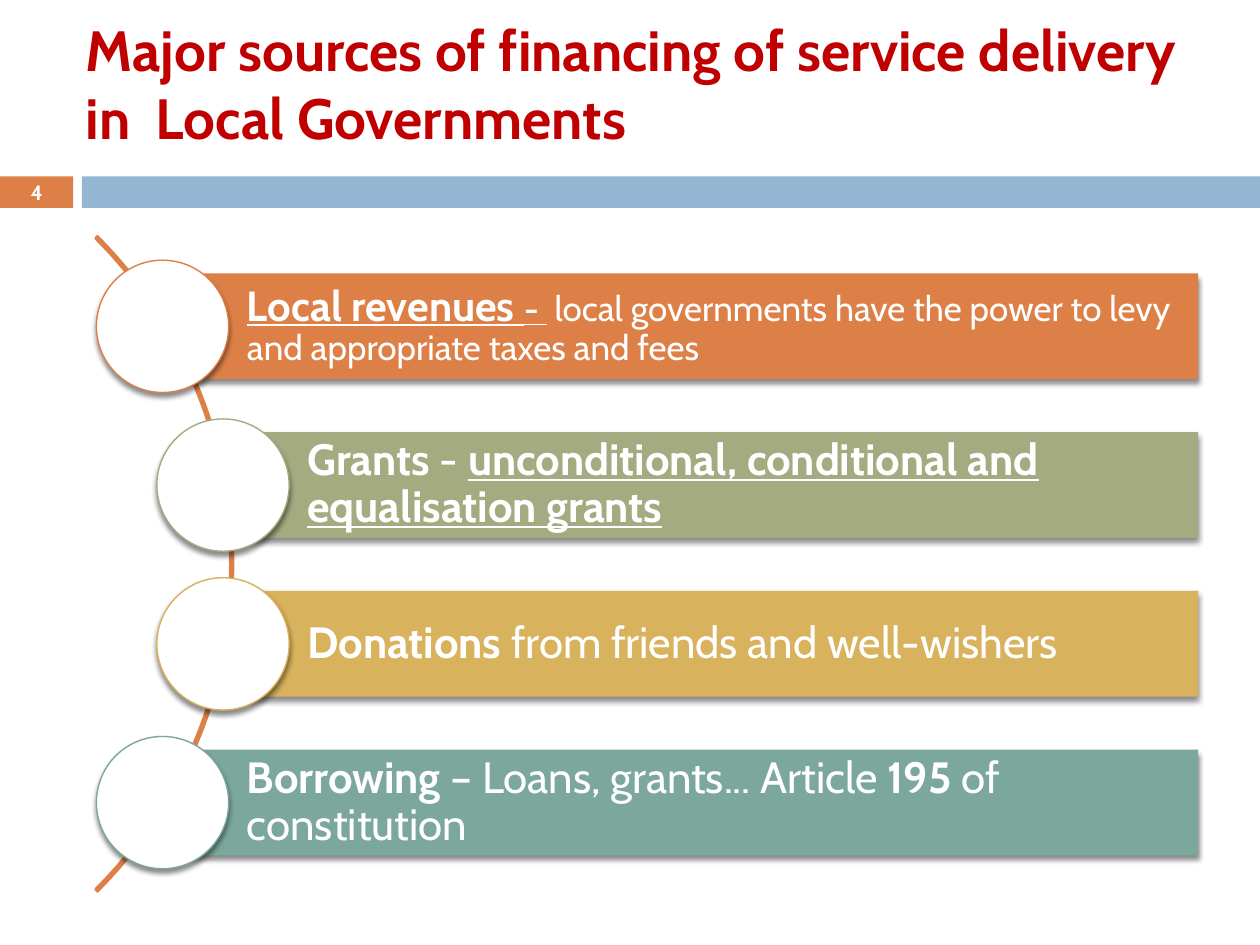
import pptx
import pptx.dml.color
import pptx.enum.shapes
import pptx.enum.text
import pptx.util
from lxml import etree
from pptx.oxml.ns import qn

SHAPE = pptx.enum.shapes.MSO_SHAPE
ALIGN = pptx.enum.text.PP_ALIGN
ANCHOR = pptx.enum.text.MSO_ANCHOR

WIDTH, HEIGHT = 10, 7.5
FONT = "Cabin"
WHITE, RED, ORANGE, BLUE = "FFFFFF", "C00000", "DD8047", "94B6D2"

# Rows of the list: circles stand on a fixed vertical pitch
FIRST_CENTER, PITCH = 2.59, 1.26
OUTER, INNER = 1.29, 1.77
BAR_RIGHT, BAR_HEIGHT, CIRCLE = 9.51, 0.84, 1.05

BOLD = {"bold": True}
PLAIN = {"bold": False}
KEY = {"bold": True, "underline": True}

# Each row: left edge, colour, text size, spans of text with their format
ROWS = [
    (OUTER, ORANGE, 20, [
        ("Local revenues ", {**KEY, "size": 24}),
        ("- ", KEY),
        (" local governments have the power to levy and appropriate taxes and fees", PLAIN)]),
    (INNER, "A5AB81", 25, [
        ("Grants ", BOLD),
        ("- ", PLAIN),
        ("unconditional, conditional and equalisation grants", KEY)]),
    (INNER, "D8B25C", 25, [
        ("Donations", BOLD),
        (" from friends and well-wishers", PLAIN)]),
    (OUTER, "7BA79D", 25, [
        ("Borrowing", BOLD),
        (" – Loans, grants... Article ", PLAIN),
        ("195", BOLD),
        (" of constitution", PLAIN)]),
]


def color(value):
    return pptx.dml.color.RGBColor.from_string(value)


def inches(*lengths):
    return [pptx.util.Inches(length) for length in lengths]


def add_shape(page, kind, place, fill=None, line=None, weight=1, shadow=False):
    shape = page.shapes.add_shape(kind, *inches(*place))
    shape.shadow.inherit = False
    if fill:
        shape.fill.solid()
        shape.fill.fore_color.rgb = color(fill)
    else:
        shape.fill.background()
    if line:
        shape.line.color.rgb = color(line)
        shape.line.width = pptx.util.Pt(weight)
    else:
        shape.line.fill.background()
    if shadow:
        add_shadow(shape)
    return shape


def add_shadow(shape, blur=3, distance=2.4, opacity=45):
    effects = shape._element.spPr.find(qn("a:effectLst"))
    outer = etree.SubElement(
        effects, qn("a:outerShdw"), blurRad=str(pptx.util.Pt(blur)),
        dist=str(pptx.util.Pt(distance)), dir="5400000", algn="ctr", rotWithShape="0")
    black = etree.SubElement(outer, qn("a:srgbClr"), val="000000")
    etree.SubElement(black, qn("a:alpha"), val=str(opacity * 1000))


def write(shape, spans, size, ink=WHITE, align=ALIGN.LEFT, spacing=1.0,
          margins=(0.1, 0.05, 0.1, 0.05)):
    frame = shape.text_frame
    frame.word_wrap = True
    frame.vertical_anchor = ANCHOR.MIDDLE
    (frame.margin_left, frame.margin_top,
     frame.margin_right, frame.margin_bottom) = inches(*margins)
    para = frame.paragraphs[0]
    para.alignment = align
    para.line_spacing = spacing
    for text, style in spans:
        span = para.add_run()
        span.text = text
        span.font.name = FONT
        span.font.size = pptx.util.Pt(style.get("size", size))
        span.font.bold = style["bold"]
        span.font.underline = style.get("underline", False)
        span.font.color.rgb = color(ink)


def add_header(page):
    title = page.shapes.add_textbox(*inches(0.58, 0.12, 8.92, 1.08))
    write(title, [("Major sources of financing of service delivery in  Local Governments", BOLD)],
          32.4, ink=RED)
    number = add_shape(page, SHAPE.RECTANGLE, (0, 1.4, 0.58, 0.25), fill=ORANGE)
    write(number, [("4", BOLD)], 11.9, align=ALIGN.CENTER, margins=(0, 0, 0, 0))
    add_shape(page, SHAPE.RECTANGLE, (0.65, 1.4, WIDTH - 0.65, 0.25), fill=BLUE)


def add_arc(page):
    arc = add_shape(page, SHAPE.BLOCK_ARC, (-5.5, 0.8, 7.35, 7.35), line=ORANGE, weight=1.5)
    for index, value in enumerate((189, 27, 0.003)):
        arc.adjustments[index] = value


def add_row(page, index, left, tint, size, spans):
    center = FIRST_CENTER + index * PITCH
    bar = add_shape(page, SHAPE.RECTANGLE,
                    (left, center - BAR_HEIGHT / 2, BAR_RIGHT - left, BAR_HEIGHT),
                    fill=tint, shadow=True)
    write(bar, spans, size, spacing=0.9, margins=(0.67, 0.07, 0.07, 0.07))
    add_shape(page, SHAPE.OVAL, (left - CIRCLE / 2, center - CIRCLE / 2, CIRCLE, CIRCLE),
              fill=WHITE, line=tint, weight=0.79, shadow=True)


def main():
    deck = pptx.Presentation()
    deck.slide_width, deck.slide_height = inches(WIDTH, HEIGHT)
    page = deck.slides.add_slide(deck.slide_layouts[6])
    add_header(page)
    add_arc(page)
    for index, row in enumerate(ROWS):
        add_row(page, index, *row)
    deck.save("out.pptx")


if __name__ == "__main__":
    main()
